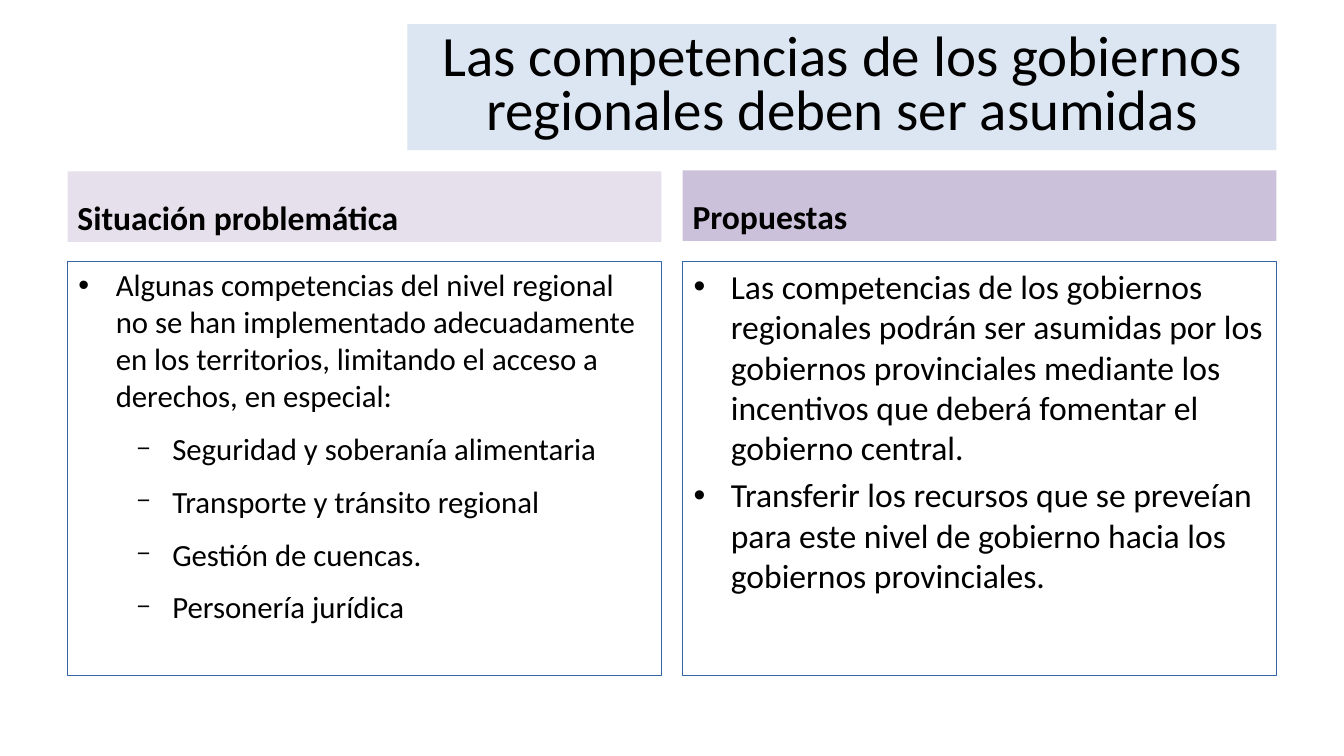
"""Build the slide on regional government powers: a title and two headed columns."""
import pptx
import pptx.util
import pptx.dml.color
import pptx.enum.text
import pptx.oxml
import pptx.oxml.ns

COLORS = {
    "title": "DCE6F2",
    "problem": "E6E0EC",
    "proposal": "CCC1DA",
    "border": "3465A4",
    "text": "000000",
}
FONT = "Calibri"
ALIGN = pptx.enum.text.PP_ALIGN
ANCHOR = pptx.enum.text.MSO_ANCHOR
INCH = pptx.util.Inches

LEFT, COL_W, GAP = 0.67, 5.89, 0.21
HEAD_H = 0.7
BODY_TOP, BODY_H = 2.59, 4.11
TITLE_W = 8.62
RIGHT = LEFT + 2 * COL_W + GAP

BULLETS = [
    {"char": "•", "margin": 0.38, "indent": -0.37, "size": 100, "before": 4.8},
    {"char": "−", "margin": 0.94, "indent": -0.35, "size": 75, "before": 11.3},
]
COLUMNS = [
    ("Situación problemática", "problem", 1.7, 22, [
        (0, "Algunas competencias del nivel regional no se han implementado adecuadamente "
            "en los territorios, limitando el acceso a derechos, en especial:"),
        (1, "Seguridad y soberanía alimentaria"),
        (1, "Transporte y tránsito regional"),
        (1, "Gestión de cuencas."),
        (1, "Personería jurídica"),
    ]),
    ("Propuestas", "proposal", 1.69, 24, [
        (0, "Las competencias de los gobiernos regionales podrán ser asumidas por los "
            "gobiernos provinciales mediante los incentivos que deberá fomentar el gobierno central."),
        (0, "Transferir los recursos que se preveían para este nivel de gobierno "
            "hacia los gobiernos provinciales."),
    ]),
]


def rgb(name):
    """Return the named colour."""
    return pptx.dml.color.RGBColor.from_string(COLORS[name])


def write(sp, lines, size, anchor, bold=False):
    """Fill a box with lines of text in one style."""
    tf = sp.text_frame
    tf.word_wrap = True
    tf.auto_size = pptx.enum.text.MSO_AUTO_SIZE.NONE
    tf.vertical_anchor = anchor
    tf.text = "\n".join(lines)
    for p in tf.paragraphs:
        for r in p.runs:
            r.font.name = FONT
            r.font.size = pptx.util.Pt(size)
            r.font.bold = bold
            r.font.color.rgb = rgb("text")
    return tf.paragraphs


prs = pptx.Presentation()
prs.slide_width = INCH(13.33)
prs.slide_height = INCH(7.5)
s = prs.slides.add_slide(prs.slide_layouts[5])

title = s.shapes.title
title.left, title.top = INCH(RIGHT - TITLE_W), INCH(0.24)
title.width, title.height = INCH(TITLE_W), INCH(1.25)
title.fill.solid()
title.fill.fore_color.rgb = rgb("title")
p = write(title, ["Las competencias de los gobiernos regionales deben ser asumidas"],
          40.7, ANCHOR.MIDDLE)[0]
p.alignment = ALIGN.CENTER
p.line_spacing = 0.8

for i, (heading, color, head_top, size, items) in enumerate(COLUMNS):
    x = INCH(LEFT + i * (COL_W + GAP))

    body = s.shapes.add_textbox(x, INCH(BODY_TOP), INCH(COL_W), INCH(BODY_H))
    body.line.color.rgb = rgb("border")
    body.line.width = pptx.util.Pt(0.75)
    paragraphs = write(body, [text for level, text in items], size, ANCHOR.TOP)
    for j, (p, (level, text)) in enumerate(zip(paragraphs, items)):
        bullet = BULLETS[level]
        p.level = level
        pPr = p._p.get_or_add_pPr()
        pPr.set("marL", str(INCH(bullet["margin"])))
        pPr.set("indent", str(INCH(bullet["indent"])))
        ns = pptx.oxml.ns.nsdecls("a")
        for xml in (
            f'<a:buClr {ns}><a:srgbClr val="{COLORS["text"]}"/></a:buClr>',
            f'<a:buSzPct {ns} val="{bullet["size"] * 1000}"/>',
            f'<a:buFont {ns} typeface="Arial"/>',
            f'<a:buChar {ns} char="{bullet["char"]}"/>',
        ):
            pPr.append(pptx.oxml.parse_xml(xml))
        p.space_before = pptx.util.Pt(bullet["before"] if j else 0)

    head = s.shapes.add_textbox(x, INCH(head_top), INCH(COL_W), INCH(HEAD_H))
    head.fill.solid()
    head.fill.fore_color.rgb = rgb(color)
    write(head, [heading], 24, ANCHOR.BOTTOM, bold=True)

prs.save("out.pptx")
